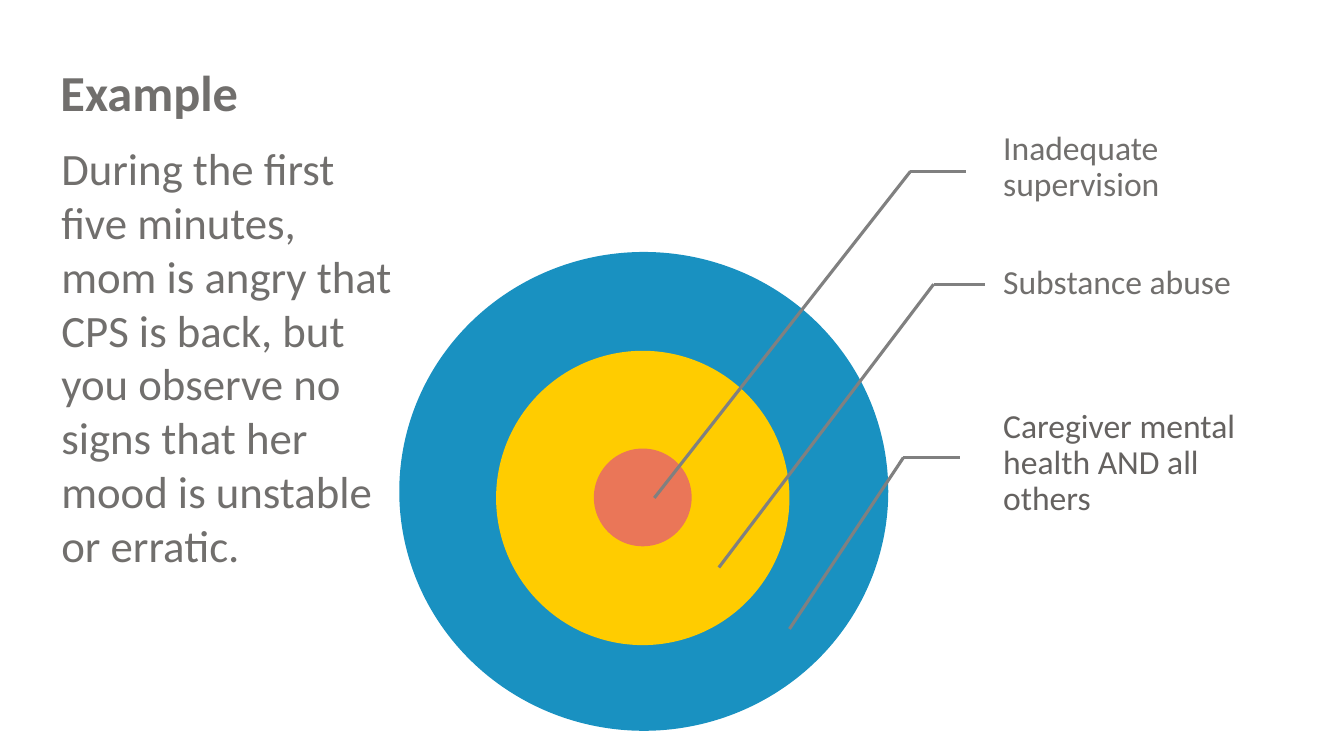
from lxml import etree
from pptx import Presentation
from pptx.dml.color import RGBColor
from pptx.enum import shapes, text
from pptx.oxml.ns import qn
from pptx.util import Inches, Pt

COLORS = {
    "text": "716F6D",
    "dark text": "656260",
    "outer": "1991C1",
    "middle": "FFCC00",
    "center": "EA7658",
    "leader": "808080",
}


class TargetSlide:
    font = "Calibri"
    leader_width = 2.25

    def __init__(self, presentation):
        self.slide = presentation.slides.add_slide(presentation.slide_layouts[6])

    def color(self, name):
        return RGBColor.from_string(COLORS[name])

    def text(self, words, box, size, color="text", bold=False, spacing=None,
             anchor=text.MSO_ANCHOR.MIDDLE, insets=(0.1, 0.05, 0.1, 0.05)):
        """Add a wrapped text box; insets run left, top, right, bottom."""
        frame = self.slide.shapes.add_textbox(*map(Inches, box)).text_frame
        frame.word_wrap = True
        frame.vertical_anchor = anchor
        (frame.margin_left, frame.margin_top,
         frame.margin_right, frame.margin_bottom) = map(Inches, insets)
        frame.text = words
        paragraph = frame.paragraphs[0]
        if spacing:
            paragraph.line_spacing = spacing
        font = paragraph.runs[0].font
        font.name, font.size, font.bold = self.font, Pt(size), bold
        font.color.rgb = self.color(color)

    def ring(self, box, color):
        ring = self.slide.shapes.add_shape(
            shapes.MSO_SHAPE.OVAL, *map(Inches, box))
        ring.shadow.inherit = False
        ring.fill.solid()
        ring.fill.fore_color.rgb = self.color(color)
        ring.line.fill.background()

    def line(self, start, end):
        line = self.slide.shapes.add_connector(
            shapes.MSO_CONNECTOR.STRAIGHT, *map(Inches, start + end))
        line.line.color.rgb = self.color("leader")
        line.line.width = Pt(self.leader_width)
        etree.SubElement(line._element.spPr, qn("a:effectLst"))

    def leader(self, label_end, elbow, target):
        """Run a line from a label to its ring, bent at the elbow."""
        self.line(elbow, label_end)
        self.line(elbow, target)

    def label(self, words, top, height, color="text"):
        self.text(words, (9.81, top, 2.64, height), 24, color, spacing=0.9,
                  insets=(0.14, 0.03, 0.03, 0.03))


def main():
    presentation = Presentation()
    presentation.slide_width = Inches(13.33)
    presentation.slide_height = Inches(7.5)
    example = TargetSlide(presentation)

    example.text("Example", (0.25, 0.33, 11.65, 1.23), 36, bold=True,
                 spacing=0.9, insets=(0.35, 0.05, 0.1, 0.05))

    example.label("Inadequate supervision", 1.33, 0.67)
    example.label("Substance abuse", 2.5, 0.63)
    example.label("Caregiver mental health AND all others", 4.06, 1.08,
                  "dark text")

    example.ring((3.96, 2.5, 4.85, 4.75), "outer")
    example.ring((4.92, 3.48, 2.91, 2.92), "middle")
    example.ring((5.89, 4.45, 0.97, 0.97), "center")

    example.leader((9.58, 1.7), (9.03, 1.7), (6.49, 4.94))
    example.leader((9.77, 2.82), (9.26, 2.82), (7.13, 5.63))
    example.leader((9.52, 4.54), (8.96, 4.54), (7.83, 6.24))

    example.text("During the first five minutes, mom is angry that CPS is back, "
                 "but you observe no signs that her mood is unstable or erratic.",
                 (0.51, 1.35, 3.54, 4.41), 32, anchor=text.MSO_ANCHOR.TOP)

    presentation.save("out.pptx")


if __name__ == "__main__":
    main()
